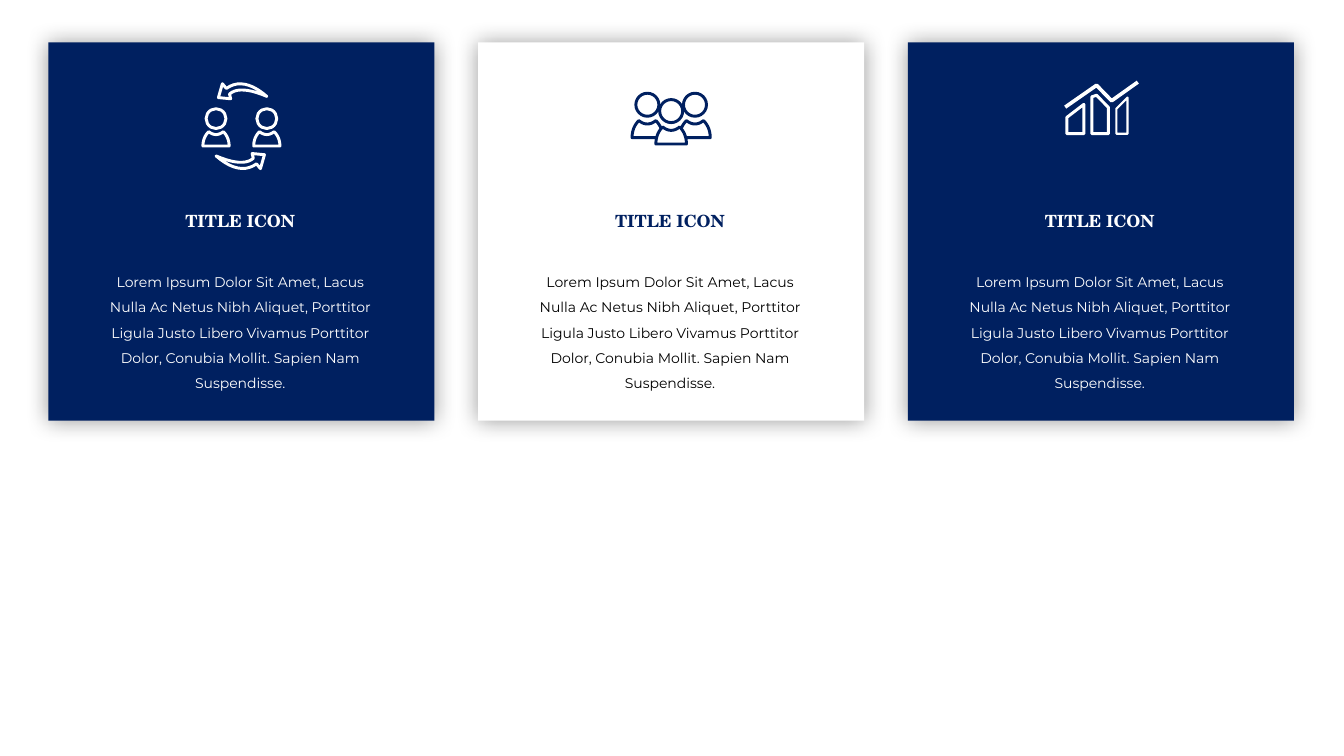
from lxml import etree
from pptx import Presentation
from pptx.dml.color import RGBColor
from pptx.enum.shapes import MSO_SHAPE
from pptx.enum.text import MSO_AUTO_SIZE, PP_ALIGN
from pptx.oxml.ns import qn
from pptx.util import Cm, Pt

RECT, OVAL = MSO_SHAPE.RECTANGLE, MSO_SHAPE.OVAL
CENTER = PP_ALIGN.CENTER
GROW = MSO_AUTO_SIZE.SHAPE_TO_FIT_TEXT
COLORS = {"navy": "002060", "white": "FFFFFF", "black": "000000"}
TITLE = "TITLE ICON"
BODY = (
    "Lorem Ipsum Dolor Sit Amet, Lacus Nulla Ac Netus Nibh Aliquet, "
    "Porttitor Ligula Justo Libero Vivamus Porttitor Dolor, "
    "Conubia Mollit. Sapien Nam Suspendisse."
)


def color(name):
    return RGBColor.from_string(COLORS[name])


def curve(start, bend, end, steps=10):
    points = []
    for i in range(steps + 1):
        t = i / steps
        points.append(tuple(
            (1 - t) ** 2 * a + 2 * t * (1 - t) * b + t * t * c
            for a, b, c in zip(start, bend, end)
        ))
    return points


def style(shape, ink, width, fill=None):
    shape.shadow.inherit = False
    if fill:
        shape.fill.solid()
        shape.fill.fore_color.rgb = color(fill)
    else:
        shape.fill.background()
    shape.line.color.rgb = color(ink)
    shape.line.width = Pt(width)


def outline(group, x, y, points, ink, width=2.1, fill=None, close=True):
    spots = [(Cm(x + dx), Cm(y + dy)) for dx, dy in points]
    form = group.shapes.build_freeform(*spots[0], scale=1.0)
    form.add_line_segments(spots[1:], close=close)
    style(form.convert_to_shape(), ink, width, fill)


def head(group, x, y, radius, ink):
    size = Cm(2 * radius)
    oval = group.shapes.add_shape(OVAL, Cm(x - radius), Cm(y - radius), size, size)
    style(oval, ink, 2.1)


def bust(group, x, y, wide, high, ink, fill=None):
    unit = (
        curve((-0.5, 1), (-0.5, 0.4), (-0.28, 0))
        + curve((-0.28, 0), (0, 0.4), (0.28, 0))
        + curve((0.28, 0), (0.5, 0.4), (0.5, 1))
    )
    points = [(dx * wide, dy * high) for dx, dy in unit]
    outline(group, x, y, points, ink, fill=fill)


def swap_icon(group, x, y, ink, back):
    for side in (-1, 1):
        head(group, x + side * 0.64, y + 1.92, 0.25, ink)
        bust(group, x + side * 0.64, y + 2.25, 0.66, 0.36, ink)
    tail = (-0.64, 0.75)
    arrow = (
        curve(tail, (-0.05, 1.26), (0.38, 0.95))
        + [(0.48, 1.07), (0.58, 0.72), (0.27, 0.69)]
        + curve((0.3, 0.81), (0.04, 1.04), tail)
    )
    for turn in (-1, 1):
        points = [(turn * dx, turn * dy) for dx, dy in arrow]
        outline(group, x, y + 2.11, points, ink)


def team_icon(group, x, y, ink, back):
    for dx, drop in ((-0.6, 0), (0.6, 0), (0, 0.16)):
        bust(group, x + dx, y + 1.97 + drop, 0.77, 0.43, ink, back)
        head(group, x + dx, y + 1.57 + drop, 0.29, ink)


def growth_icon(group, x, y, ink, back):
    base = 2.3
    bars = (
        (2.1, [(-0.86, 1.89), (-0.43, 1.56)]),
        (2.1, [(-0.23, 1.37), (-0.11, 1.33), (0.19, 1.64)]),
        (1.6, [(0.39, 1.67), (0.67, 1.39)]),
    )
    for width, top in bars:
        points = [(top[0][0], base), *top, (top[-1][0], base)]
        outline(group, x, y, points, ink, width)
    trend = [(-0.9, 1.63), (-0.11, 1.08), (0.27, 1.47), (0.93, 1)]
    outline(group, x, y, trend, ink, 2.6, close=False)


def label(slide, x, y, wide, high, text, font, size, ink, bold=False, space=1):
    box = slide.shapes.add_textbox(Cm(x - wide / 2), Cm(y), Cm(wide), Cm(high))
    frame = box.text_frame
    frame.word_wrap = True
    frame.auto_size = GROW
    para = frame.paragraphs[0]
    para.text = text
    para.alignment = CENTER
    para.line_spacing = space
    para.font.name = font
    para.font.size = Pt(size)
    para.font.bold = bold
    para.font.color.rgb = color(ink)


def panel(slide, x, y, wide, high, fill):
    rect = slide.shapes.add_shape(RECT, Cm(x), Cm(y), Cm(wide), Cm(high))
    rect.shadow.inherit = False
    rect.fill.solid()
    rect.fill.fore_color.rgb = color(fill)
    rect.line.fill.background()
    effects = rect.element.spPr.find(qn("a:effectLst"))
    shade = etree.SubElement(
        effects, qn("a:outerShdw"), blurRad=str(Pt(16)), algn="ctr", rotWithShape="0"
    )
    tone = etree.SubElement(shade, qn("a:srgbClr"), val=COLORS["black"])
    etree.SubElement(tone, qn("a:alpha"), val="40000")


def card(slide, x, y, wide, high, fill, ink, prose, icon):
    panel(slide, x, y, wide, high, fill)
    mid = x + wide / 2
    icon(slide.shapes.add_group_shape(), mid, y, ink, fill)
    label(slide, mid - 0.03, y + 4.11, 4.01, 0.77, TITLE, "TeX Gyre Schola", 12, ink, bold=True)
    label(slide, mid - 0.03, y + 5.49, 7.67, 3.43, BODY, "Montserrat", 10, prose, space=1.5)


def main():
    deck = Presentation()
    deck.slide_width, deck.slide_height = Cm(33.87), Cm(19.05)
    slide = deck.slides.add_slide(deck.slide_layouts[6])
    cards = (
        ("navy", "white", "white", swap_icon),
        ("white", "navy", "black", team_icon),
        ("navy", "white", "white", growth_icon),
    )
    for i, look in enumerate(cards):
        card(slide, 1.22 + i * 10.83, 1.07, 9.73, 9.53, *look)
    deck.save("out.pptx")


if __name__ == "__main__":
    main()
